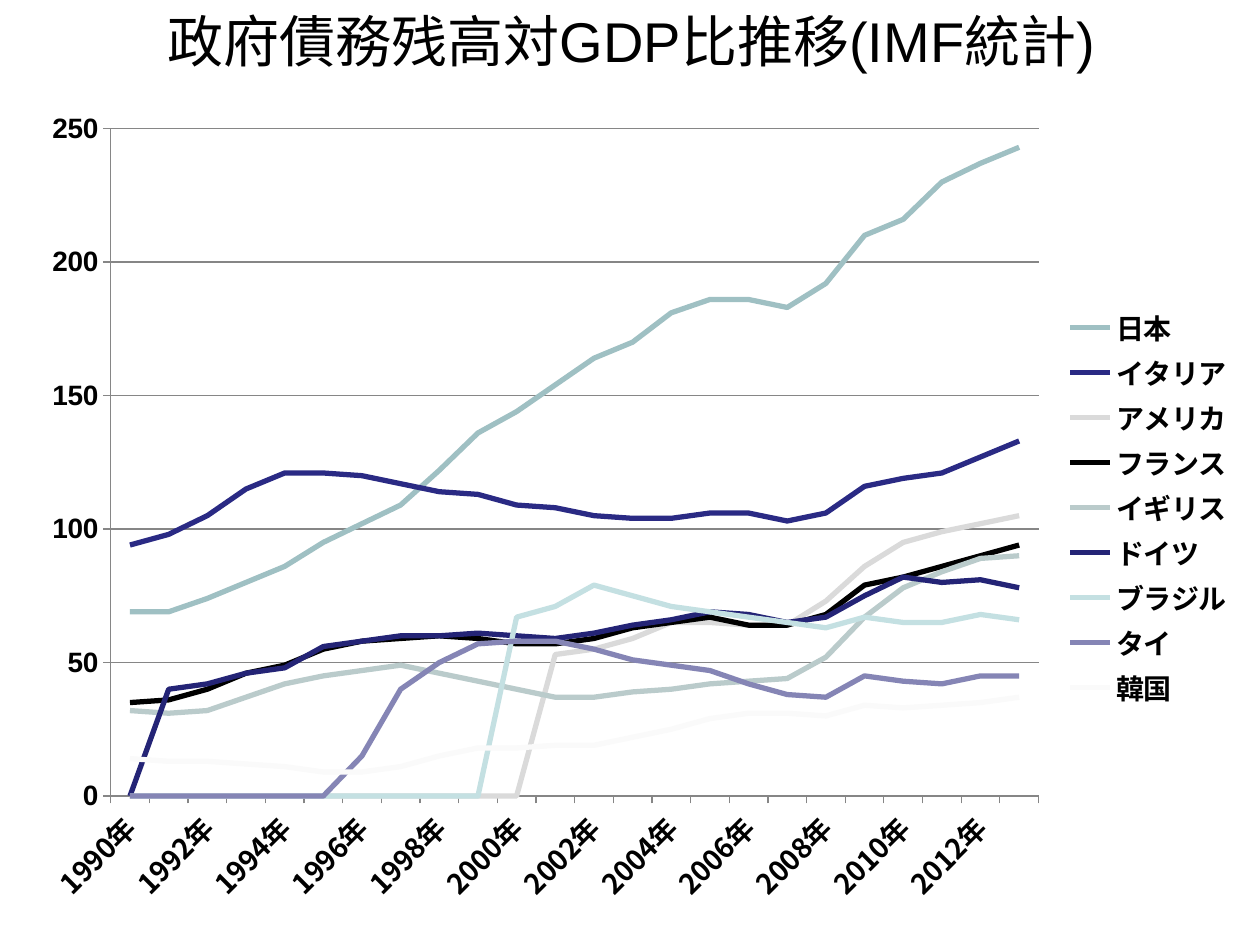
from dataclasses import dataclass

from pptx import Presentation
from pptx.chart.data import CategoryChartData
from pptx.dml.color import RGBColor
from pptx.enum.chart import XL_CHART_TYPE as ChartType
from pptx.enum.chart import XL_LEGEND_POSITION as LegendPosition
from pptx.enum.chart import XL_MARKER_STYLE as Marker
from pptx.enum.chart import XL_TICK_MARK as TickMark
from pptx.enum.text import MSO_ANCHOR as Anchor
from pptx.enum.text import MSO_AUTO_SIZE as AutoSize
from pptx.enum.text import PP_ALIGN as Align
from pptx.oxml import parse_xml
from pptx.oxml.ns import nsdecls, qn
from pptx.util import Inches, Pt


@dataclass(frozen=True)
class Theme:
    latin: str = "Arial"
    japanese: str = "Noto Sans CJK JP"
    ink: str = "000000"
    rule: str = "868686"
    title_size: int = 32
    chart_size: int = 16
    line_width: float = 3
    rule_width: float = 0.75


YEARS = [f"{year}年" for year in range(1990, 2014)]
DEBT_RATIOS = [
    ("日本", "9FC0C3", [69, 69, 74, 80, 86, 95, 102, 109, 122, 136, 144, 154,
                      164, 170, 181, 186, 186, 183, 192, 210, 216, 230, 237, 243]),
    ("イタリア", "2A2A84", [94, 98, 105, 115, 121, 121, 120, 117, 114, 113, 109, 108,
                        105, 104, 104, 106, 106, 103, 106, 116, 119, 121, 127, 133]),
    ("アメリカ", "DADADA", [0] * 11 + [53, 55, 59, 65, 65, 64, 64, 73,
                                   86, 95, 99, 102, 105]),
    ("フランス", "000000", [35, 36, 40, 46, 49, 55, 58, 59, 60, 59, 57, 57,
                        59, 63, 65, 67, 64, 64, 68, 79, 82, 86, 90, 94]),
    ("イギリス", "BACBCB", [32, 31, 32, 37, 42, 45, 47, 49, 46, 43, 40, 37,
                        37, 39, 40, 42, 43, 44, 52, 67, 78, 84, 89, 90]),
    ("ドイツ", "242476", [0, 40, 42, 46, 48, 56, 58, 60, 60, 61, 60, 59,
                       61, 64, 66, 69, 68, 65, 67, 75, 82, 80, 81, 78]),
    ("ブラジル", "C4E0E2", [0] * 10 + [67, 71, 79, 75, 71, 69, 67, 65, 63,
                                   67, 65, 65, 68, 66]),
    ("タイ", "8585B5", [0] * 6 + [15, 40, 50, 57, 58, 58, 55, 51, 49, 47, 42,
                                38, 37, 45, 43, 42, 45, 45]),
    ("韓国", "FAFAFA", [14, 13, 13, 12, 11, 9, 9, 11, 15, 18, 18, 19,
                      19, 22, 25, 29, 31, 31, 30, 34, 33, 34, 35, 37]),
]


class SlideBuilder:
    def __init__(self, slide, theme):
        self.slide = slide
        self.theme = theme

    def style_font(self, font, size, face, bold):
        font.size = Pt(size)
        font.name = face
        font.bold = bold
        font.color.rgb = RGBColor.from_string(self.theme.ink)

    def set_japanese_face(self, properties):
        face = parse_xml(f'<a:ea {nsdecls("a")} typeface="{self.theme.japanese}"/>')
        properties.find(qn("a:latin")).addnext(face)

    def style_line(self, line, color, width):
        line.color.rgb = RGBColor.from_string(color)
        line.width = Pt(width)

    def title(self, text, left, top, width, height):
        heading = self.slide.shapes.title
        heading.left, heading.top = Inches(left), Inches(top)
        heading.width, heading.height = Inches(width), Inches(height)
        frame = heading.text_frame
        frame.auto_size = AutoSize.NONE
        frame.word_wrap = True
        frame.vertical_anchor = Anchor.MIDDLE
        paragraph = frame.paragraphs[0]
        paragraph.alignment = Align.CENTER
        run = paragraph.add_run()
        run.text = text
        self.style_font(run.font, self.theme.title_size, self.theme.latin, False)
        self.set_japanese_face(run.font._element)

    def line_chart(self, categories, series_rows, left, top, width, height):
        data = CategoryChartData(number_format="General")
        data.categories = categories
        for name, _, values in series_rows:
            data.add_series(name, values)
        chart = self.slide.shapes.add_chart(
            ChartType.LINE, Inches(left), Inches(top), Inches(width), Inches(height), data
        ).chart
        theme = self.theme
        chart.has_title = False
        self.style_font(chart.font, theme.chart_size, theme.latin, True)
        chart.plots[0].vary_by_categories = False
        for series, (_, color, _) in zip(chart.plots[0].series, series_rows):
            series.smooth = False
            series.marker.style = Marker.NONE
            self.style_line(series.format.line, color, theme.line_width)
        self.legend(chart)
        self.axes(chart)
        self.plot_area(chart, x=0.07, y=0.04, w=0.76, h=0.81)

    def legend(self, chart):
        chart.has_legend = True
        chart.legend.position = LegendPosition.RIGHT
        chart.legend.include_in_layout = False
        font = chart.legend.font
        self.style_font(font, self.theme.chart_size, self.theme.japanese, True)
        self.set_japanese_face(font._element)

    def axes(self, chart):
        theme = self.theme
        faces = (theme.japanese, theme.latin)
        for axis, face in zip((chart.category_axis, chart.value_axis), faces):
            axis.major_tick_mark = TickMark.OUTSIDE
            axis.minor_tick_mark = TickMark.NONE
            self.style_font(axis.tick_labels.font, theme.chart_size, face, True)
            self.set_japanese_face(axis.tick_labels.font._element)
            self.style_line(axis.format.line, theme.rule, theme.rule_width)

        values = chart.value_axis
        values.minimum_scale, values.maximum_scale, values.major_unit = 0, 250, 50
        values.has_major_gridlines = True
        self.style_line(values.major_gridlines.format.line, theme.rule, theme.rule_width)

        years = chart.category_axis._element
        years.find(qn("c:txPr")).find(qn("a:bodyPr")).set("rot", "-2700000")
        single_level = years.find(qn("c:noMultiLvlLbl"))
        for tag, step in (("tickLblSkip", 2), ("tickMarkSkip", 1)):
            single_level.addprevious(parse_xml(f'<c:{tag} {nsdecls("c")} val="{step}"/>'))

    def plot_area(self, chart, **fractions):
        area = chart._chartSpace.find(qn("c:chart")).find(qn("c:plotArea"))
        for layout in area.findall(qn("c:layout")):
            area.remove(layout)
        sizes = "".join(f'<c:{key} val="{value}"/>' for key, value in fractions.items())
        area.insert(0, parse_xml(
            f'<c:layout {nsdecls("c")}><c:manualLayout><c:layoutTarget val="inner"/>'
            f'<c:xMode val="edge"/><c:yMode val="edge"/>{sizes}'
            "</c:manualLayout></c:layout>"
        ))


def main():
    presentation = Presentation()
    presentation.slide_width, presentation.slide_height = Inches(10), Inches(7.5)
    title_only = presentation.slide_layouts[5]
    builder = SlideBuilder(presentation.slides.add_slide(title_only), Theme())
    builder.title("政府債務残高対GDP比推移(IMF統計)", 0.51, 0.13, 9, 0.38)
    builder.line_chart(YEARS, DEBT_RATIOS, 0.2, 0.76, 9.69, 6.54)
    presentation.save("out.pptx")


if __name__ == "__main__":
    main()
